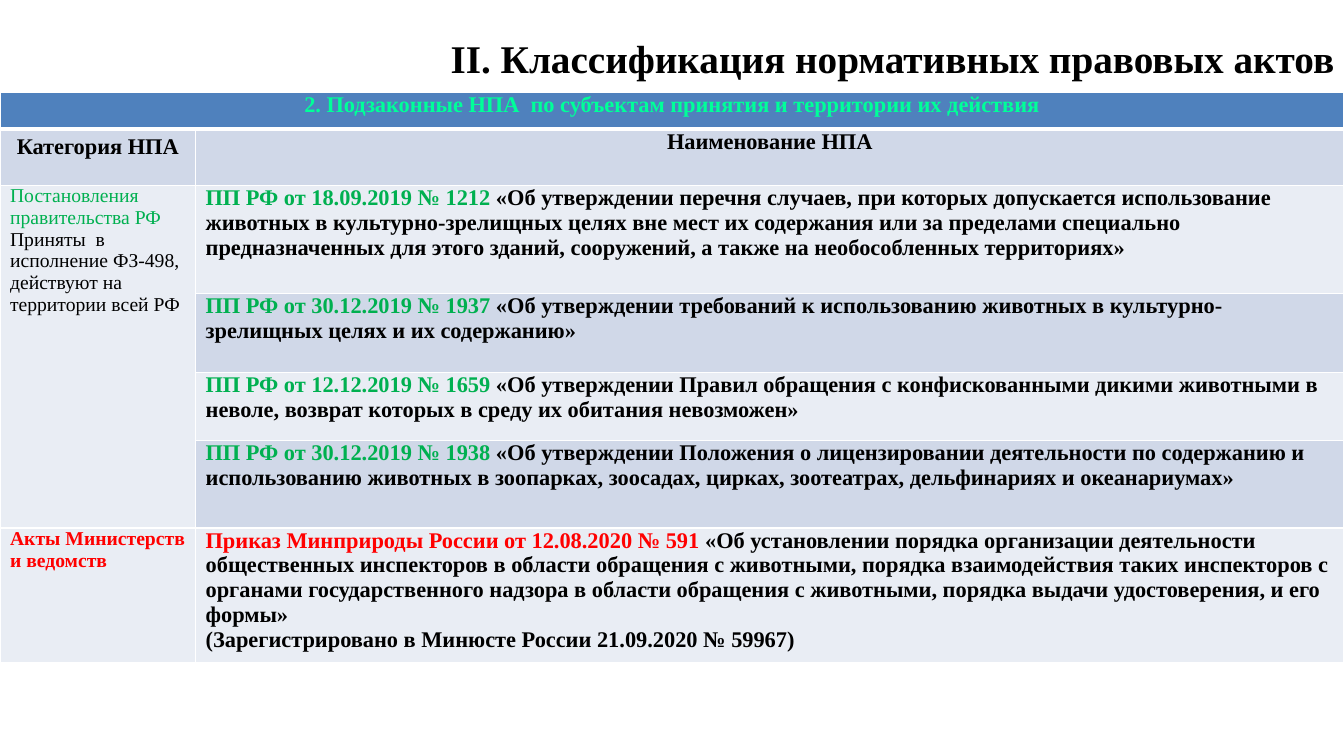
"""Build the slide on the classification of regulatory legal acts."""
from dataclasses import dataclass

from lxml import etree
from pptx import Presentation
from pptx.dml.color import RGBColor
from pptx.enum import text
from pptx.oxml import ns
from pptx.util import Inches, Pt


@dataclass(frozen=True)
class Theme:
    """Colours, font and type sizes of the slide."""
    font: str = "Times New Roman"
    title_size: int = 28
    body_size: int = 16
    side_size: int = 14
    black: str = "000000"
    mint: str = "00FF99"
    green: str = "00B050"
    red: str = "FF0000"
    border: str = "FFFFFF"
    banner: str = "4F81BD"
    dark_band: str = "D0D8E8"
    light_band: str = "E9EDF4"


THEME = Theme()
COLUMN_WIDTHS = (1.94, 11.39)
ROW_HEIGHTS = (0.36, 0.56, 1.07, 0.79, 0.67, 0.87, 1.33)

DECREES = (
    ("ПП РФ от 18.09.2019 № 1212 ",
     "«Об утверждении перечня случаев, при которых допускается использование животных в "
     "культурно-зрелищных целях вне мест их содержания или за пределами специально "
     "предназначенных для этого зданий, сооружений, а также на необособленных территориях»"),
    ("ПП РФ от 30.12.2019 № 1937 ",
     "«Об утверждении требований к использованию животных в культурно-зрелищных целях "
     "и их содержанию»"),
    ("ПП РФ от 12.12.2019 № 1659 ",
     "«Об утверждении Правил обращения с конфискованными дикими животными в неволе, "
     "возврат которых в среду их обитания невозможен»"),
    ("ПП РФ от 30.12.2019 № 1938 ",
     "«Об утверждении Положения о лицензировании деятельности по содержанию и использованию "
     "животных в зоопарках, зоосадах, цирках, зоотеатрах, дельфинариях и океанариумах»"),
)
ORDER = (
    "Приказ Минприроды России от 12.08.2020 № 591",
    " «Об установлении порядка организации деятельности общественных инспекторов в области "
    "обращения с животными, порядка взаимодействия таких инспекторов с органами "
    "государственного надзора в области обращения с животными, порядка выдачи "
    "удостоверения, и его формы»",
)
REGISTRATION = "(Зарегистрировано в Минюсте России 21.09.2020 № 59967)"


def write(frame, paragraphs, size, bold=True, align=text.PP_ALIGN.LEFT):
    """Fill a text frame with paragraphs given as lists of (words, colour)."""
    for index, pieces in enumerate(paragraphs):
        paragraph = frame.paragraphs[0] if index == 0 else frame.add_paragraph()
        paragraph.alignment = align
        paragraph.font.name = THEME.font
        paragraph.font.size = Pt(size)
        paragraph.font.bold = bold
        for words, colour in pieces:
            run = paragraph.add_run()
            run.text = words
            run.font.color.rgb = RGBColor.from_string(colour)


def style_cell(cell, fill, bottom=1):
    """Give a cell its margins, white borders and fill."""
    cell.margin_left = cell.margin_right = Inches(0.1)
    cell.margin_top = cell.margin_bottom = 0
    properties = cell._tc.get_or_add_tcPr()
    for side, width in (("L", 1), ("R", 1), ("T", 1), ("B", bottom)):
        line = etree.SubElement(properties, ns.qn(f"a:ln{side}"), w=str(Pt(width)))
        solid = etree.SubElement(line, ns.qn("a:solidFill"))
        etree.SubElement(solid, ns.qn("a:srgbClr"), val=THEME.border)
    cell.fill.solid()
    cell.fill.fore_color.rgb = RGBColor.from_string(fill)


def add_title(slide):
    """Place the right-aligned heading."""
    title = slide.shapes.title
    title.left, title.top = Inches(0), Inches(0.05)
    title.width, title.height = Inches(13.33), Inches(0.81)
    title.text_frame.vertical_anchor = text.MSO_ANCHOR.MIDDLE
    write(title.text_frame, [[("II. Классификация нормативных правовых актов", THEME.black)]],
          THEME.title_size, align=text.PP_ALIGN.RIGHT)
    title.text_frame.paragraphs[0].line_spacing = 1.5


def add_grid(slide):
    """Add the empty table with its sizes, bands and merged cells."""
    grid = slide.shapes.add_table(
        len(ROW_HEIGHTS), len(COLUMN_WIDTHS), Inches(0), Inches(0.92),
        Inches(sum(COLUMN_WIDTHS)), Inches(sum(ROW_HEIGHTS))).table
    for column, width in zip(grid.columns, COLUMN_WIDTHS):
        column.width = Inches(width)
    for number, (row, height) in enumerate(zip(grid.rows, ROW_HEIGHTS)):
        row.height = Inches(height)
        band = THEME.dark_band if number % 2 else THEME.light_band
        for position, cell in enumerate(row.cells):
            if number == 0:
                style_cell(cell, THEME.banner, bottom=3)
            else:
                merged_side = position == 0 and number > 1
                style_cell(cell, THEME.light_band if merged_side else band)
    grid.cell(0, 0).merge(grid.cell(0, 1))
    grid.cell(2, 0).merge(grid.cell(5, 0))
    return grid


def fill_grid(grid):
    """Write the headings, decrees and ministry order."""
    centre = text.PP_ALIGN.CENTER
    headings = (
        (0, 0, "2. Подзаконные НПА  по субъектам принятия и территории их действия", THEME.mint),
        (1, 0, "Категория НПА", THEME.black),
        (1, 1, "Наименование НПА", THEME.black),
    )
    for row, column, words, colour in headings:
        write(grid.cell(row, column).text_frame, [[(words, colour)]], THEME.body_size, align=centre)
    category = grid.cell(1, 0)
    category.margin_left = category.margin_right = Inches(0.13)
    category.margin_top = category.margin_bottom = Inches(0.05)

    write(grid.cell(2, 0).text_frame,
          [[("Постановления правительства РФ", THEME.green)],
           [("Приняты  в исполнение ФЗ-498, действуют на территории всей РФ", THEME.black)]],
          THEME.side_size, bold=False)
    for row, (number, subject) in enumerate(DECREES, start=2):
        write(grid.cell(row, 1).text_frame,
              [[(number, THEME.green), (subject, THEME.black)]], THEME.body_size)

    write(grid.cell(6, 0).text_frame, [[("Акты Министерств и ведомств", THEME.red)]],
          THEME.side_size)
    number, subject = ORDER
    write(grid.cell(6, 1).text_frame,
          [[(number, THEME.red), (subject, THEME.black)], [(REGISTRATION, THEME.black)]],
          THEME.body_size)


def main():
    """Create the presentation and save it."""
    deck = Presentation()
    deck.slide_width, deck.slide_height = Inches(13.33), Inches(7.5)
    slide = deck.slides.add_slide(deck.slide_layouts[5])
    add_title(slide)
    fill_grid(add_grid(slide))
    deck.save("out.pptx")


if __name__ == "__main__":
    main()
